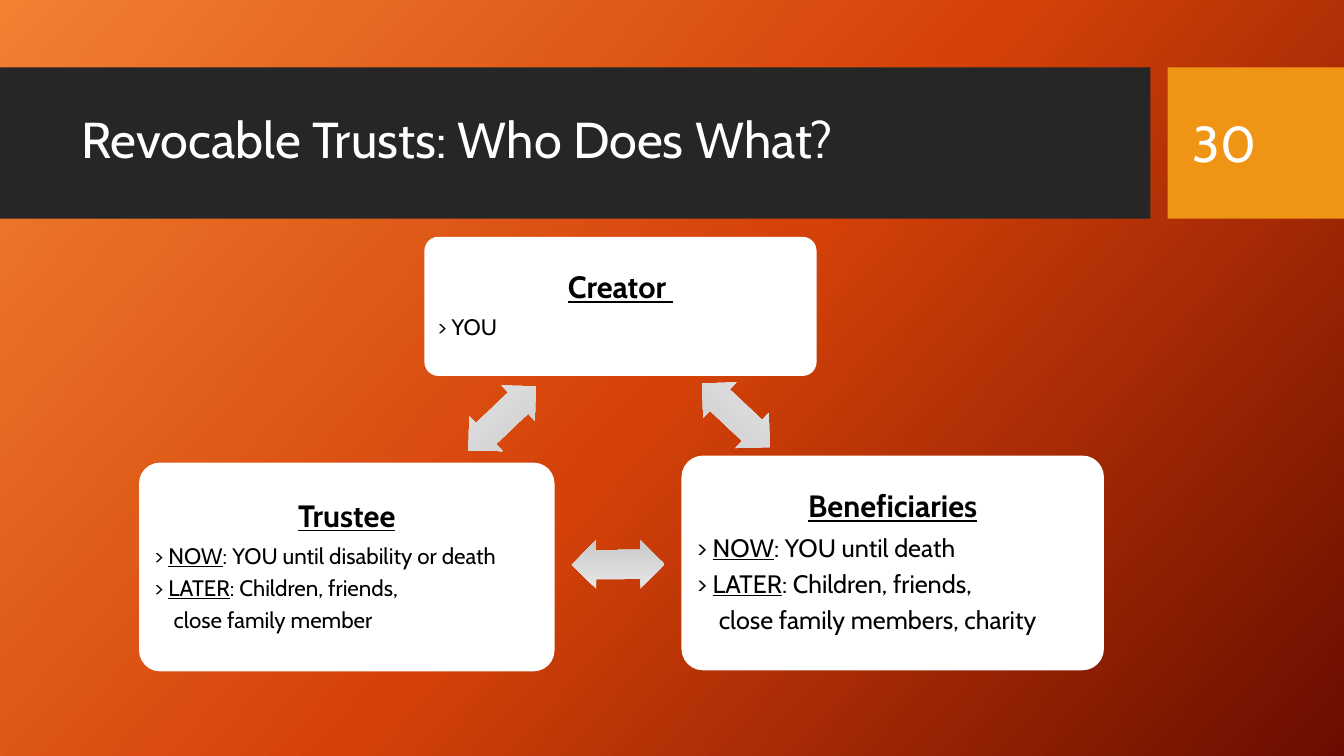
from copy import deepcopy

from pptx import Presentation
from pptx import util as u
from pptx.dml.color import RGBColor
from pptx.enum import shapes, text

WHITE = RGBColor(0xFF, 0xFF, 0xFF)
BLACK = RGBColor(0x00, 0x00, 0x00)
CHARCOAL = RGBColor(0x26, 0x26, 0x26)
AMBER = RGBColor(0xF0, 0x94, 0x15)
BACKDROP = [(0, RGBColor(0xF1, 0x80, 0x31)),
            (0.5, RGBColor(0xD5, 0x42, 0x09)),
            (1, RGBColor(0x6A, 0x0D, 0x00))]
SILVER = [(0, RGBColor(0xE7, 0xE7, 0xE7)), (1, RGBColor(0xC9, 0xC9, 0xC9))]
SHAPE = shapes.MSO_SHAPE


class TrustSlide:
    """Places elements by left, top, width, height in percent of the slide."""

    font = "Cabin"
    heading_size = 22
    display_size = 36

    def __init__(self, deck):
        self.deck = deck
        self.slide = deck.slides.add_slide(deck.slide_layouts[6])

    def place(self, left, top, width, height):
        across, down = self.deck.slide_width / 100, self.deck.slide_height / 100
        return [u.Emu(round(n)) for n in
                (left * across, top * down, width * across, height * down)]

    def gradient(self, fill, stops, clockwise):
        fill.gradient()
        fill.gradient_angle = 360 - clockwise
        first = fill.gradient_stops[0]._gs
        for _ in stops[2:]:
            first.addnext(deepcopy(first))
        for stop, (position, colour) in zip(fill.gradient_stops, stops):
            stop.position = position
            stop.color.rgb = colour

    def background(self, stops, clockwise):
        self.gradient(self.slide.background.fill, stops, clockwise)

    def shape(self, kind, at, colour=None):
        shape = self.slide.shapes.add_shape(kind, *self.place(*at))
        shape.shadow.inherit = False
        shape.line.fill.background()
        if colour is not None:
            shape.fill.solid()
            shape.fill.fore_color.rgb = colour
        return shape

    def run(self, paragraph, words, size, colour, bold=False, underline=False):
        run = paragraph.add_run()
        run.text = words
        font = run.font
        font.name, font.size = self.font, u.Pt(size)
        font.bold, font.underline = bold, underline
        font.color.rgb = colour

    def label(self, at, words, spacing=1.0):
        frame = self.slide.shapes.add_textbox(*self.place(*at)).text_frame
        frame.word_wrap = True
        frame.vertical_anchor = text.MSO_ANCHOR.MIDDLE
        paragraph = frame.paragraphs[0]
        paragraph.line_spacing = spacing
        self.run(paragraph, words, self.display_size, WHITE)

    def role(self, at, heading, size, lines):
        """Card with a heading and (underlined term, rest) lines.

        A line without a term that does not open with ">" continues the one above.
        """
        card = self.shape(SHAPE.ROUNDED_RECTANGLE, at, WHITE)
        card.adjustments[0] = 0.1
        frame = card.text_frame
        frame.word_wrap = True
        frame.vertical_anchor = text.MSO_ANCHOR.MIDDLE
        frame.margin_left = frame.margin_right = u.Inches(0.09)
        frame.margin_top = frame.margin_bottom = u.Inches(0.09)

        title = frame.paragraphs[0]
        self.spacing(title, self.heading_size, text.PP_ALIGN.CENTER)
        self.run(title, heading, self.heading_size, BLACK, True, True)
        for term, rest in lines:
            paragraph = frame.add_paragraph()
            self.spacing(paragraph, size, text.PP_ALIGN.LEFT)
            if term:
                self.run(paragraph, "> ", size, BLACK)
                self.run(paragraph, term, size, BLACK, underline=True)
            elif not rest.startswith(">"):
                indent = u.Pt(size * 0.87)
                paragraph._p.get_or_add_pPr().set("marL", str(indent))
            self.run(paragraph, rest, size, BLACK)

    def spacing(self, paragraph, size, alignment):
        paragraph.alignment = alignment
        paragraph.line_spacing = 0.9
        paragraph.space_after = u.Pt(size * 0.35)

    def arrow(self, left, top, rotation):
        arrow = self.shape(SHAPE.LEFT_RIGHT_ARROW, (left, top, 6.9, 6.4))
        arrow.adjustments[0], arrow.adjustments[1] = 0.6, 0.5
        arrow.rotation = rotation
        self.gradient(arrow.fill, SILVER, 90)


def main():
    deck = Presentation()
    deck.slide_width, deck.slide_height = u.Inches(13.33), u.Inches(7.5)
    page = TrustSlide(deck)
    page.background(BACKDROP, 42)

    page.shape(SHAPE.RECTANGLE, (0, 8.93, 85.6, 20), CHARCOAL)
    page.shape(SHAPE.RECTANGLE, (86.87, 8.93, 13.13, 20), AMBER)
    page.label((5.33, 10.27, 77.19, 17.2), "Revocable Trusts: Who Does What?", 0.9)
    page.label((88, 10.93, 9.45, 15.87), "30")

    page.role((31.58, 31.33, 29.18, 18.4), "Creator ", 16, [("", "> YOU")])
    page.role((50.71, 60.27, 31.43, 28.4), "Beneficiaries", 18, [
        ("NOW", ": YOU until death"),
        ("LATER", ": Children, friends,"),
        ("", "close family members, charity")])
    page.role((10.35, 61.2, 30.91, 27.6), "Trustee", 16, [
        ("NOW", ": YOU until disability or death"),
        ("LATER", ": Children, friends,"),
        ("", "close family member")])

    for left, top, rotation in ((51.31, 51.73, 43.3),
                                (42.54, 71.47, 179.6),
                                (33.91, 52.13, 316.4)):
        page.arrow(left, top, rotation)

    deck.save("out.pptx")


if __name__ == "__main__":
    main()
